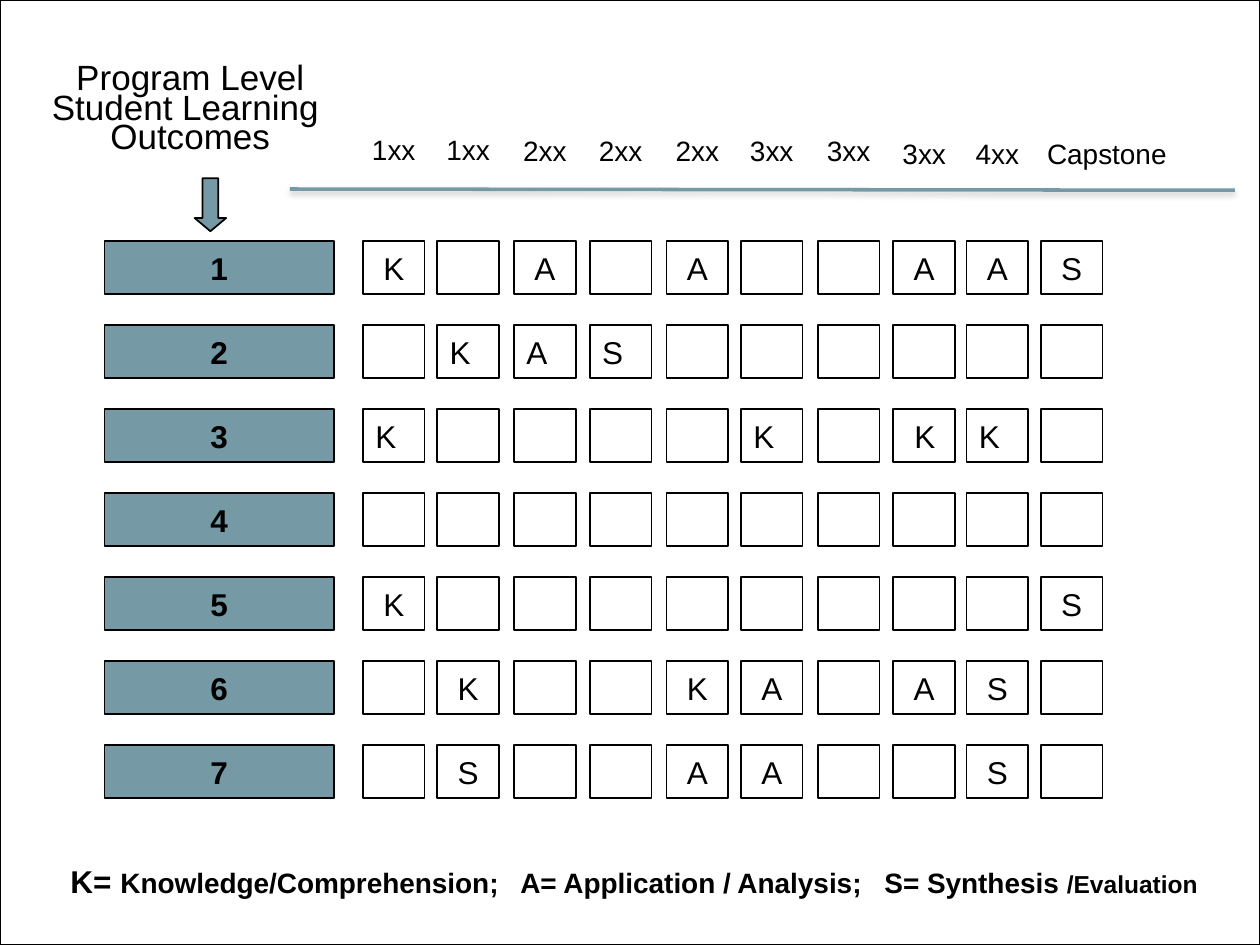
from dataclasses import dataclass
from lxml import etree
from pptx import Presentation
from pptx import util as u
from pptx.dml.color import RGBColor
from pptx.enum import shapes, text
from pptx.oxml import parse_xml
from pptx.oxml.ns import nsdecls, qn

TEAL, BLACK, WHITE = "759AA5", "000000", "FFFFFF"
FONT = "Arial"
ROW_TOP, ROW_STEP = 1.915, 2 / 3
CELL_W, CELL_H = 0.49, 0.42
LEFT_ALIGNED_ROWS = (1, 2)
LEFT, CENTER = text.PP_ALIGN.LEFT, text.PP_ALIGN.CENTER
RECT = shapes.MSO_SHAPE.RECTANGLE


@dataclass
class Box:
    left: float
    top: float
    width: float
    height: float


@dataclass
class Run:
    words: str
    size: float
    bold: bool = False


@dataclass
class Course:
    label: str
    left: float
    label_box: Box
    marks: dict[int, str]


def course(label: str, left: float, top: float, marks: dict[int, str]) -> Course:
    return Course(label, left, Box(left, top, CELL_W, CELL_H), marks)


COURSES = [
    course("1xx", 2.88, 1, {1: "K", 3: "K", 5: "K"}),
    course("1xx", 3.47, 1, {2: "K", 6: "K", 7: "S"}),
    course("2xx", 4.08, 1.01, {1: "A", 2: "A"}),
    course("2xx", 4.68, 1.01, {2: "S"}),
    course("2xx", 5.29, 1.01, {1: "A", 6: "K", 7: "A"}),
    course("3xx", 5.88, 1.01, {3: "K", 6: "A", 7: "A"}),
    course("3xx", 6.49, 1.01, {}),
    course("3xx", 7.09, 1.03, {1: "A", 3: " K", 6: "A"}),
    course("4xx", 7.67, 1.03, {1: "A", 3: "K", 6: "S", 7: "S"}),
    Course("Capstone", 8.26, Box(8.22, 0.99, 1.13, 0.51), {1: "S", 5: "S"}),
]


def color(value: str) -> RGBColor:
    return RGBColor.from_string(value)


def place(box: Box) -> tuple:
    return tuple(u.Inches(v) for v in (box.left, box.top, box.width, box.height))


def add_box(s, box: Box, fill: str | None = None, line: str | None = None,
            weight: float = 1, kind=RECT):
    sp = s.shapes.add_shape(kind, *place(box))
    sp.shadow.inherit = False
    if fill:
        sp.fill.solid()
        sp.fill.fore_color.rgb = color(fill)
    else:
        sp.fill.background()
    if line:
        sp.line.color.rgb = color(line)
        sp.line.width = u.Pt(weight)
    else:
        sp.line.fill.background()
    return sp


def write(sp, lines: list[list[Run]], align=CENTER, spacing: float | None = None,
          wrap: bool = False) -> None:
    tf = sp.text_frame
    tf.word_wrap = wrap
    tf.vertical_anchor = text.MSO_ANCHOR.MIDDLE
    for i, runs in enumerate(lines):
        p = tf.paragraphs[0] if i == 0 else tf.add_paragraph()
        p.alignment = align
        if spacing:
            p.line_spacing = spacing
        for run in runs:
            r = p.add_run()
            r.text = run.words
            r.font.name = FONT
            r.font.size = u.Pt(run.size)
            r.font.bold = run.bold
            r.font.color.rgb = color(BLACK)


def make_translucent(sp, percent: int) -> None:
    fill = sp.fill.fore_color._xFill.find(qn("a:srgbClr"))
    etree.SubElement(fill, qn("a:alpha")).set("val", str(percent * 1000))


def add_course(s, item: Course) -> None:
    header = add_box(s, item.label_box, WHITE)
    make_translucent(header, 50)
    write(header, [[Run(item.label, 16)]], spacing=0.8)
    for row in range(7):
        top = ROW_TOP + row * ROW_STEP
        cell = add_box(s, Box(item.left, top, CELL_W, CELL_H), line=BLACK)
        if row + 1 in item.marks:
            align = LEFT if row in LEFT_ALIGNED_ROWS else CENTER
            write(cell, [[Run(item.marks[row + 1], 18)]], align)


def add_outcomes(s) -> None:
    title = add_box(s, Box(0.47, 0.55, 2.08, 0.67), WHITE, WHITE)
    lines = ("Program Level", "Student Learning ", "Outcomes")
    write(title, [[Run(line, 20)] for line in lines], spacing=0.7)
    arrow = add_box(s, Box(1.46, 1.5, 0.42, 0.25), TEAL, BLACK,
                    kind=shapes.MSO_SHAPE.LEFT_ARROW)
    arrow.rotation = 270
    arrow.adjustments[0] = 0.5
    arrow.adjustments[1] = 0.42
    for row in range(7):
        bar = add_box(s, Box(0.83, ROW_TOP + row * ROW_STEP, 1.82, CELL_H), TEAL, BLACK)
        write(bar, [[Run(str(row + 1), 18, True)]])


def add_legend(s) -> None:
    sp = s.shapes.add_textbox(*place(Box(0.56, 6.83, 9.1, 0.33)))
    tf = sp.text_frame
    tf.margin_left = tf.margin_right = 0
    write(sp, [[
        Run("K= ", 18, True),
        Run("Knowledge/Comprehension;\tA= Application / Analysis;\tS= Synthesis ", 16, True),
        Run("/Evaluation", 14, True),
    ]], LEFT, wrap=True)
    tabs = etree.SubElement(tf.paragraphs[0]._p.get_or_add_pPr(), qn("a:tabLst"))
    for stop in (3.57, 6.46):
        tab = etree.SubElement(tabs, qn("a:tab"))
        tab.set("pos", str(u.Inches(stop)))
        tab.set("algn", "l")


def add_divider(s) -> None:
    line = s.shapes.add_connector(shapes.MSO_CONNECTOR.STRAIGHT, u.Inches(2.3),
                                  u.Inches(1.5), u.Inches(9.8), u.Inches(1.51))
    line.line.color.rgb = color(TEAL)
    line.line.width = u.Pt(2)
    line._element.spPr.append(parse_xml(
        f'<a:effectLst {nsdecls("a")}><a:outerShdw blurRad="{u.Pt(3.1)}" '
        f'dist="{u.Pt(1.6)}" dir="5400000" rotWithShape="0"><a:srgbClr val="808080">'
        '<a:alpha val="38000"/></a:srgbClr></a:outerShdw></a:effectLst>'))


def main() -> None:
    prs = Presentation()
    prs.slide_width, prs.slide_height = u.Inches(10), u.Inches(7.5)
    s = prs.slides.add_slide(prs.slide_layouts[6])
    add_box(s, Box(0, 0, 10, 7.5), WHITE, BLACK, 0.75)
    add_outcomes(s)
    add_legend(s)
    for item in COURSES:
        add_course(s, item)
    add_divider(s)
    prs.save("out.pptx")


if __name__ == "__main__":
    main()
